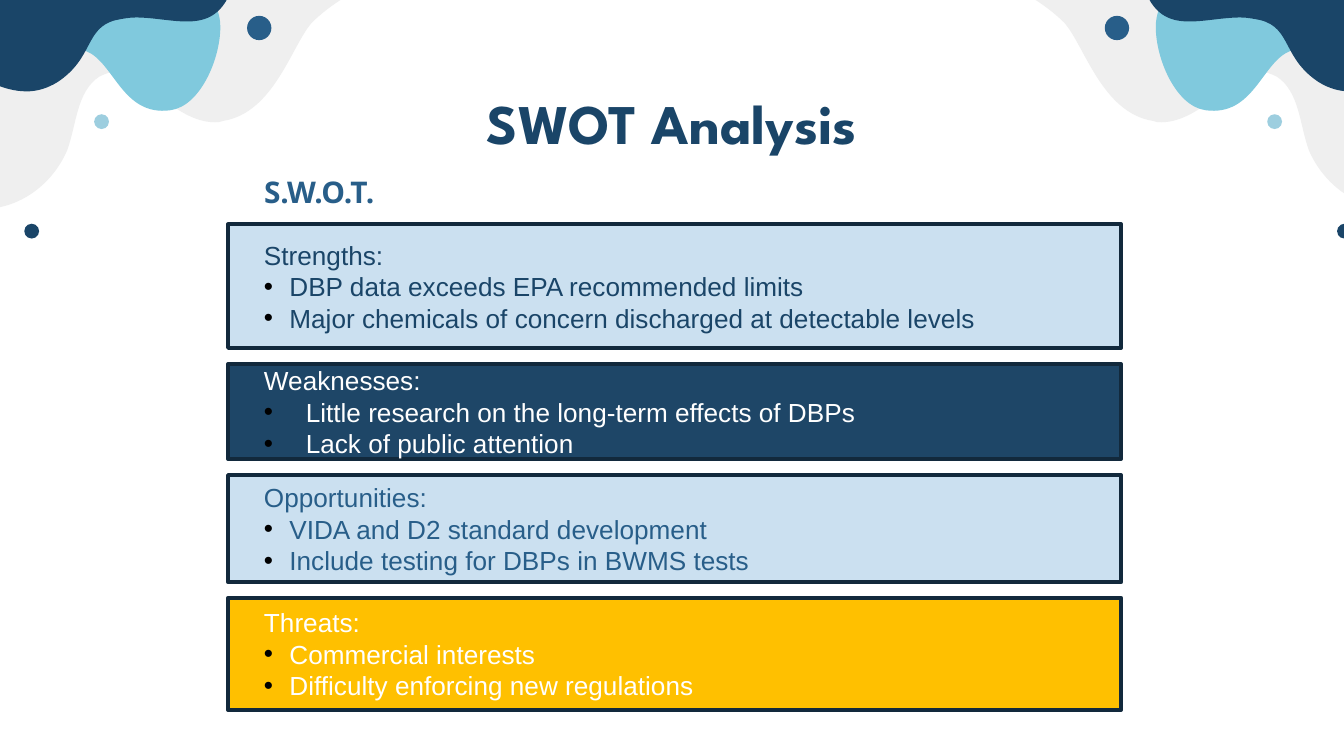
from lxml.etree import SubElement
from pptx import Presentation
from pptx.dml.color import RGBColor
from pptx.enum.shapes import MSO_SHAPE
from pptx.enum.text import MSO_ANCHOR, MSO_AUTO_SIZE, PP_ALIGN
from pptx.oxml.ns import qn
from pptx.util import Cm, Pt

NAVY = RGBColor(0x1A, 0x45, 0x68)
SLATE = RGBColor(0x1E, 0x46, 0x67)
BLUE = RGBColor(0x28, 0x5E, 0x89)
SKY = RGBColor(0x80, 0xC9, 0xDD)
PALE_SKY = RGBColor(0x9D, 0xCE, 0xDF)
PALE_BLUE = RGBColor(0xCB, 0xE0, 0xF0)
GREY = RGBColor(0xEF, 0xEF, 0xEF)
GOLD = RGBColor(0xFF, 0xC0, 0x00)
OUTLINE = RGBColor(0x12, 0x29, 0x3C)
WHITE = RGBColor(0xFF, 0xFF, 0xFF)

# Corner waves in inches: start point, then lines (end) or curves (two controls, end)
GREY_WAVE = [(2.54, -0.13),
             (2.68, -0.13, 2.79, -0.12, 2.78, -0.09), (2.77, -0.06, 2.59, -0.03, 2.55, -0.01),
             (2.47, 0.04, 2.39, 0.1, 2.32, 0.17), (2.17, 0.34, 2.04, 0.84, 1.66, 0.9),
             (1.64, 0.91, 1.62, 0.91, 1.6, 0.91), (1.35, 0.91, 1.12, 0.64, 1.03, 0.58),
             (0.98, 0.55, 0.93, 0.53, 0.88, 0.53), (0.83, 0.53, 0.78, 0.55, 0.74, 0.57),
             (0.57, 0.68, 0.57, 0.93, 0.5, 1.12), (0.4, 1.35, 0.19, 1.52, -0.05, 1.55),
             (-0.04, 1.04, -0.07, 0.52, -0.14, 0.01), (0.18, -0.05, 0.51, -0.06, 0.84, -0.07),
             (1.3, -0.09, 1.75, -0.1, 2.21, -0.12), (2.24, -0.12, 2.4, -0.13, 2.54, -0.13)]
SKY_WAVE = [(0.01, 0.22),
            (0.01, 0.27, 0.03, 0.32, 0.09, 0.37), (0.24, 0.47, 0.46, 0.31, 0.64, 0.38),
            (0.85, 0.46, 0.91, 0.87, 1.27, 0.82), (1.49, 0.79, 1.64, 0.44, 1.64, 0.2),
            (1.64, 0.15, 1.63, 0.11, 1.62, 0.08), (1.62, 0.06, 1.36, 0.01, 1.33, 0.01),
            (1.06, -0.01, 0.78, -0.01, 0.5, 0.01), (0.37, 0.02, 0.24, 0.04, 0.11, 0.06),
            (0.07, 0.06, 0.09, 0.06, 0.06, 0.09), (0.04, 0.11, 0.01, 0.16, 0.01, 0.22)]
NAVY_WAVE = [(0.2, 0.68),
             (0.01, 0.68, -0.14, 0.57, -0.14, 0.57), (-0.14, -0.13), (1.74, -0.13),
             (1.67, 0.11, 1.54, 0.16, 1.39, 0.16), (1.27, 0.16, 1.14, 0.13, 1.01, 0.13),
             (0.96, 0.13, 0.91, 0.14, 0.86, 0.15), (0.63, 0.21, 0.7, 0.43, 0.43, 0.61),
             (0.35, 0.66, 0.27, 0.68, 0.2, 0.68)]
WAVES = [(GREY_WAVE, GREY), (SKY_WAVE, SKY), (NAVY_WAVE, NAVY)]
# Dots: centre x, centre y, diameter in cm
DOTS = [(4.9, 0.53, 0.46, BLUE), (1.92, 2.3, 0.28, PALE_SKY), (0.6, 4.37, 0.28, NAVY)]
MIRROR_WIDTH = 10.24  # inches: x of a left wave plus x of its reflection

# Panels: top, height, bullet hanging indent in cm, fill, text colour, heading, points
PANELS = [
    (4.24, 2.34, 0.48, PALE_BLUE, NAVY, "Strengths:",
     ["DBP data exceeds EPA recommended limits",
      "Major chemicals of concern discharged at detectable levels"]),
    (6.88, 1.8, 0.79, SLATE, WHITE, "Weaknesses:",
     ["Little research on the long-term effects of DBPs", "Lack of public attention"]),
    (8.98, 2.03, 0.48, PALE_BLUE, BLUE, "Opportunities:",
     ["VIDA and D2 standard development", "Include testing for DBPs in BWMS tests"]),
    (11.3, 2.12, 0.48, GOLD, WHITE, "Threats:",
     ["Commercial interests", "Difficulty enforcing new regulations"]),
]
PANEL_LEFT, PANEL_WIDTH, TEXT_INDENT = 4.31, 16.88, 0.43


def write(paragraph, text, *, font="Arial", size=14, color=NAVY, bold=False,
          align=PP_ALIGN.LEFT, indent=0, hanging=0):
    """Fill a paragraph; a hanging indent gives it a black bullet."""
    properties = paragraph._p.get_or_add_pPr()
    properties.set("marL", str(Cm(indent + hanging)))
    properties.set("indent", str(-Cm(hanging)))
    if hanging:
        bullet_color = SubElement(properties, qn("a:buClr"))
        SubElement(bullet_color, qn("a:srgbClr"), val="000000")
        SubElement(properties, qn("a:buFont"), typeface="Arial")
        SubElement(properties, qn("a:buChar"), char="•")
    else:
        SubElement(properties, qn("a:buNone"))
    paragraph.alignment = align
    paragraph.line_spacing = 1.0
    paragraph.space_before = Pt(0)
    run = paragraph.add_run()
    run.text = text
    run.font.name, run.font.size, run.font.bold = font, Pt(size), bold
    run.font.color.rgb = color


class SwotSlide:
    def __init__(self, presentation):
        self.slide = presentation.slides.add_slide(presentation.slide_layouts[1])
        self.shapes = self.slide.shapes

    def paint(self, shape, fill, outline=None):
        shape.shadow.inherit = False
        shape.fill.solid()
        shape.fill.fore_color.rgb = fill
        if outline is None:
            shape.line.fill.background()
        else:
            shape.line.color.rgb = outline
            shape.line.width = Pt(2)

    def wave(self, segments, fill, mirrored):
        points = [(Cm(2.54 * (MIRROR_WIDTH - x if mirrored else x)), Cm(2.54 * y))
                  for segment in segments
                  for x, y in zip(segment[::2], segment[1::2])]
        builder = self.shapes.build_freeform(*points[0])
        builder.add_line_segments(points[1:], close=True)
        wave = builder.convert_to_shape()
        # Join each group of three points into one Bezier curve
        vertices = iter(list(wave._element.iter(qn("a:lnTo"))))
        for segment in segments[1:]:
            vertex = next(vertices)
            if len(segment) == 6:
                curve = vertex.makeelement(qn("a:cubicBezTo"))
                vertex.addprevious(curve)
                for control in (vertex, next(vertices), next(vertices)):
                    curve.append(control[0])
                    control.getparent().remove(control)
        self.paint(wave, fill)

    def dot(self, x, y, diameter, fill, mirrored):
        center = MIRROR_WIDTH * 2.54 - x if mirrored else x
        dot = self.shapes.add_shape(MSO_SHAPE.OVAL, Cm(center - diameter / 2),
                                    Cm(y - diameter / 2), Cm(diameter), Cm(diameter))
        self.paint(dot, fill)

    def placeholder(self, index, text, left, top, width, height, **style):
        holder = self.slide.placeholders[index]
        holder.left, holder.top = Cm(left), Cm(top)
        holder.width, holder.height = Cm(width), Cm(height)
        frame = holder.text_frame
        frame.word_wrap = True
        frame.auto_size = MSO_AUTO_SIZE.NONE
        frame.vertical_anchor = MSO_ANCHOR.TOP
        frame.margin_left = frame.margin_right = Cm(0.25)
        frame.margin_top = frame.margin_bottom = Cm(0.25)
        write(frame.paragraphs[0], text, **style)

    def panel(self, top, height, hanging, fill, color, heading, points):
        panel = self.shapes.add_shape(MSO_SHAPE.RECTANGLE, Cm(PANEL_LEFT), Cm(top),
                                      Cm(PANEL_WIDTH), Cm(height))
        self.paint(panel, fill, OUTLINE)
        frame = panel.text_frame
        frame.word_wrap = True
        frame.vertical_anchor = MSO_ANCHOR.MIDDLE
        style = {"color": color, "indent": TEXT_INDENT}
        write(frame.paragraphs[0], heading, **style)
        for point in points:
            write(frame.add_paragraph(), point, hanging=hanging, **style)


def main():
    presentation = Presentation()
    presentation.slide_width, presentation.slide_height = Cm(25.4), Cm(14.29)
    swot = SwotSlide(presentation)

    # Corner decoration, left and reflected right
    for mirrored in (False, True):
        for segments, fill in WAVES:
            swot.wave(segments, fill, mirrored)
        for dot in DOTS:
            swot.dot(*dot, mirrored)

    # Headings
    swot.placeholder(0, "SWOT Analysis", 1.5, 1.43, 22.4, 1.6, font="League Spartan",
                     size=30, bold=True, align=PP_ALIGN.CENTER)
    swot.placeholder(1, "S.W.O.T.", PANEL_LEFT, 3.03, 7.44, 1.22, font="Open Sans",
                     size=16, color=BLUE, bold=True, indent=TEXT_INDENT)

    # Four panels
    for panel in PANELS:
        swot.panel(*panel)

    presentation.save("out.pptx")


if __name__ == "__main__":
    main()
